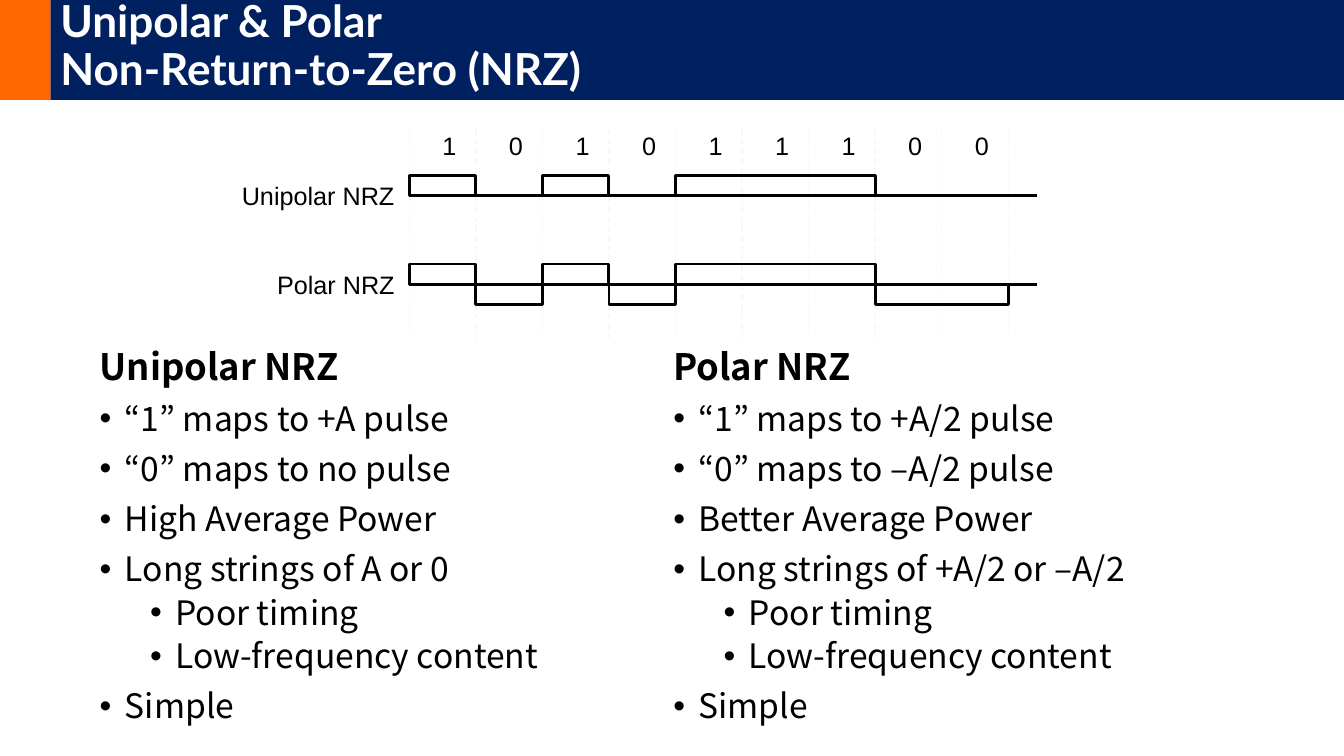
from dataclasses import dataclass
from itertools import groupby

from lxml.etree import SubElement
from pptx import Presentation
from pptx.dml.color import RGBColor
from pptx.enum.dml import MSO_LINE_DASH_STYLE as Dash
from pptx.enum.shapes import MSO_CONNECTOR_TYPE as Connector, MSO_SHAPE as Shape
from pptx.enum.text import MSO_ANCHOR as Anchor, MSO_AUTO_SIZE as AutoSize, PP_ALIGN as Align
from pptx.oxml.ns import qn
from pptx.util import Inches, Pt


@dataclass(frozen=True)
class Theme:
    navy: RGBColor = RGBColor(0x00, 0x20, 0x60)
    orange: RGBColor = RGBColor(0xFF, 0x66, 0x00)
    white: RGBColor = RGBColor(0xFF, 0xFF, 0xFF)
    black: RGBColor = RGBColor(0x00, 0x00, 0x00)
    guide: RGBColor = RGBColor(0xF8, 0xF8, 0xF8)
    title_font: str = "Lato"
    body_font: str = "Noto Sans CJK KR"
    diagram_font: str = "Arial"
    title_size: float = 31.5
    heading_size: float = 26
    body_size: float = 24
    diagram_size: float = 18


theme = Theme()


def add_text(paragraph, text, font, size, color, bold=False):
    run = paragraph.add_run()
    run.text = text
    run.font.name = font
    run.font.size = Pt(size)
    run.font.color.rgb = color
    run.font.bold = bold


def add_line(slide, start, end, color, width):
    line = slide.shapes.add_connector(
        Connector.STRAIGHT, *(Inches(value) for value in start + end))
    line.line.color.rgb = color
    line.line.width = Pt(width)
    SubElement(line._element.spPr, qn("a:effectLst"))
    return line


presentation = Presentation()
presentation.slide_width = Inches(13.33)
presentation.slide_height = Inches(7.5)
slide = presentation.slides.add_slide(presentation.slide_layouts[5])

band_height = 0.99
accent_width = 0.5
accent = slide.shapes.add_shape(
    Shape.RECTANGLE, 0, 0, Inches(accent_width), Inches(band_height))
accent.shadow.inherit = False
accent.fill.solid()
accent.fill.fore_color.rgb = theme.orange
accent.line.fill.background()

title = slide.shapes.title
title.left, title.top = Inches(accent_width), 0
title.width = presentation.slide_width - title.left
title.height = Inches(band_height)
title.fill.solid()
title.fill.fore_color.rgb = theme.navy
title.text_frame.auto_size = AutoSize.NONE
title.text_frame.word_wrap = True
title.text_frame.vertical_anchor = Anchor.BOTTOM
paragraph = title.text_frame.paragraphs[0]
paragraph.alignment = Align.LEFT
paragraph.line_spacing = 0.9
add_text(paragraph, "Unipolar & Polar", theme.title_font, theme.title_size, theme.white, True)
paragraph.add_line_break()
add_text(paragraph, "Non-Return-to-Zero (NRZ)", theme.title_font, theme.title_size,
         theme.white, True)

columns = [
    (0.89, 5.72, "Unipolar NRZ", [
        (0, "“1” maps to +A pulse"),
        (0, "“0” maps to no pulse"),
        (0, "High Average Power"),
        (0, "Long strings of A or 0"),
        (1, "Poor timing"),
        (1, "Low-frequency content"),
        (0, "Simple"),
    ]),
    (6.58, 6.03, "Polar NRZ", [
        (0, "“1” maps to +A/2 pulse"),
        (0, "“0” maps to –A/2 pulse"),
        (0, "Better Average Power"),
        (0, "Long strings of +A/2 or –A/2"),
        (1, "Poor timing"),
        (1, "Low-frequency content"),
        (0, "Simple"),
    ]),
]
for left, width, heading, points in columns:
    box = slide.shapes.add_textbox(Inches(left), Inches(3.41), Inches(width), Inches(4.05))
    frame = box.text_frame
    frame.word_wrap = True
    paragraph = frame.paragraphs[0]
    paragraph.line_spacing = 0.9
    paragraph.space_before = Pt(10)
    add_text(paragraph, heading, theme.body_font, theme.heading_size, theme.black, True)
    for level, point in points:
        paragraph = frame.add_paragraph()
        paragraph.level = level
        paragraph.line_spacing = 0.9
        paragraph.space_before = Pt(5 if level else 10)
        properties = paragraph._p.get_or_add_pPr()
        properties.set("marL", str(Inches(0.25 + 0.5 * level)))
        properties.set("indent", str(Inches(-0.25)))
        SubElement(properties, qn("a:buFont"), typeface=theme.diagram_font)
        SubElement(properties, qn("a:buChar"), char="•")
        add_text(paragraph, point, theme.body_font, theme.body_size, theme.black)

bits = "101011100"
bit_left = 4.06
bit_width = 0.66
pulse_height = 0.2
label_height = 0.4
label_right = 4.02

for index in range(len(bits) + 1):
    x = bit_left + index * bit_width
    guide = add_line(slide, (x, 1.28), (x, 3.35), theme.guide, 1)
    guide.line.dash_style = Dash.DASH

labels = [(bit_left + index * bit_width + 0.23, 1.24, 0.34, bit)
          for index, bit in enumerate(bits)]
signals = [("Unipolar NRZ", 1.72, 1.94, "1"), ("Polar NRZ", 1.37, 2.82, "10")]
for name, label_width, baseline, pulsed_bits in signals:
    add_line(slide, (bit_left, baseline), (10.29, baseline), theme.black, 2)
    labels.append((label_right - label_width, baseline - 0.2, label_width, name))
    start = 0
    for bit, group in groupby(bits):
        length = len(list(group))
        if bit in pulsed_bits:
            top = baseline - pulse_height if bit == "1" else baseline
            pulse = slide.shapes.add_shape(
                Shape.RECTANGLE, Inches(bit_left + start * bit_width), Inches(top),
                Inches(length * bit_width), Inches(pulse_height))
            pulse.shadow.inherit = False
            pulse.fill.background()
            pulse.line.color.rgb = theme.black
            pulse.line.width = Pt(2)
        start += length

for left, top, width, text in labels:
    label = slide.shapes.add_textbox(
        Inches(left), Inches(top), Inches(width), Inches(label_height))
    label.text_frame.word_wrap = False
    label.text_frame.auto_size = AutoSize.SHAPE_TO_FIT_TEXT
    add_text(label.text_frame.paragraphs[0], text, theme.diagram_font,
             theme.diagram_size, theme.black)

presentation.save("out.pptx")
